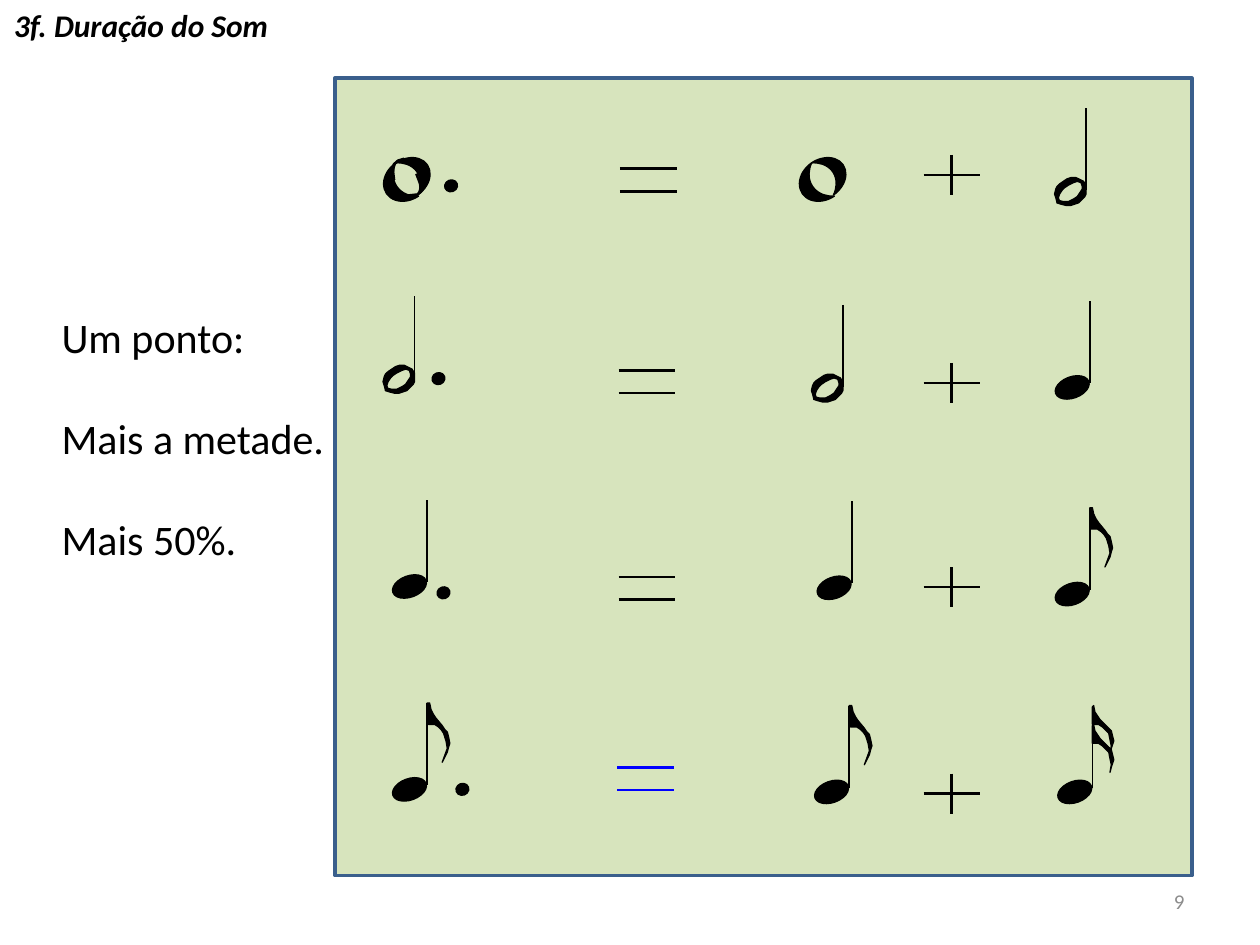
from lxml.etree import SubElement
from pptx import Presentation
from pptx.dml.color import RGBColor
from pptx.enum.shapes import MSO_CONNECTOR, MSO_SHAPE
from pptx.enum.text import MSO_ANCHOR, PP_ALIGN
from pptx.oxml.ns import qn
from pptx.util import Inches, Pt

COLORS = {"ink": "000000", "panel": "D7E4BD", "border": "3A5F8C",
          "accent": "0000FF", "number": "8C8C8C"}

EIGHTH_FLAG = [(0, 0), (2, 0), (3, 5), (5, 9), (7, 12), (12, 18), (14, 21),
               (16, 23), (17, 27), (18, 32), (17, 35), (16, 39), (14, 43),
               (12, 47), (16, 36), (15, 30), (13, 24), (11, 21), (9, 19),
               (6, 17), (2, 17), (1, 17)]
SIXTEENTH_FLAG = [(0, 1), (1, 0), (2, 5), (4, 8), (6, 11), (11, 16), (13, 18),
                  (15, 20), (16, 24), (17, 28), (16, 31), (15, 34), (14, 38),
                  (15, 32), (14, 27), (13, 22), (10, 19), (8, 17), (5, 15),
                  (1, 15), (0, 15)]
RING_TOP = [(-2, 58), (-4, 57), (-8, 55), (-12, 55), (-15, 56), (-18, 58),
            (-21, 60), (-23, 62), (-24, 64), (-25, 68), (-24, 71), (-23, 75),
            (-21, 74), (-22, 71), (-21, 68), (-19, 65), (-17, 63), (-14, 61),
            (-10, 59), (-7, 58), (-4, 59)]
RING_BOTTOM = [(-23, 75), (-20, 76), (-16, 77), (-12, 77), (-9, 76), (-6, 75),
               (-4, 73), (-1, 70), (0, 68), (0, 64), (0, 61), (-2, 58),
               (-4, 59), (-3, 62), (-3, 64), (-5, 67), (-7, 70), (-10, 72),
               (-14, 74), (-18, 74), (-22, 73)]
ARC_TOP = [(309, 140), (311, 135), (313, 131), (315, 129), (319, 128), (324, 129)]
ARC_BOTTOM = [(318, 152), (323, 154), (328, 156), (332, 155), (334, 149), (335, 141)]

deck = Presentation()
deck.slide_width, deck.slide_height = Inches(10), Inches(7.5)
page = deck.slides.add_slide(deck.slide_layouts[5])


def add_line(x1, y1, x2, y2, color="ink", width=1):
    line = page.shapes.add_connector(MSO_CONNECTOR.STRAIGHT, Inches(x1),
                                     Inches(y1), Inches(x2), Inches(y2))
    line.line.color.rgb = RGBColor.from_string(COLORS[color])
    line.line.width = Pt(width)
    SubElement(line._element.spPr, qn("a:effectLst"))


def paint(shape, width=0.75, fill="ink", line="ink", rotation=0):
    shape.shadow.inherit = False
    shape.rotation = rotation
    if fill:
        shape.fill.solid()
        shape.fill.fore_color.rgb = RGBColor.from_string(COLORS[fill])
    else:
        shape.fill.background()
    shape.line.color.rgb = RGBColor.from_string(COLORS[line])
    shape.line.width = Pt(width)


panel = page.shapes.add_shape(MSO_SHAPE.RECTANGLE, Inches(2.66), Inches(0.62),
                              Inches(6.8), Inches(6.33))
paint(panel, 2, "panel", "border")

outlines = []
filled_notes = [(3.11, 4.57, []), (6.48, 4.58, []), (8.37, 2.99, []),
                (3.11, 6.18, [(EIGHTH_FLAG, 0)]),
                (6.46, 6.2, [(EIGHTH_FLAG, 0)]),
                (8.37, 4.63, [(EIGHTH_FLAG, 0)]),
                (8.39, 6.2, [(SIXTEENTH_FLAG, 0), (SIXTEENTH_FLAG, 0.15)])]
for left, top, flags in filled_notes:
    head = page.shapes.add_shape(MSO_SHAPE.OVAL, Inches(left), Inches(top),
                                 Inches(0.28), Inches(0.17))
    paint(head, rotation=340)
    add_line(left + 0.28, top - 0.6, left + 0.28, top + 0.05)
    outlines += [(left + 0.28, top - 0.6 + drop, flag) for flag, drop in flags]

for stem, top in [(3.29, 2.35), (6.69, 2.42), (8.62, 0.86)]:
    add_line(stem, top, stem, top + 0.65)
    outlines += [(stem, top, RING_TOP), (stem, top, RING_BOTTOM)]

for left, top, points in outlines:
    corners = [(left * 100 + x, top * 100 + y) for x, y in points]
    builder = page.shapes.build_freeform(*corners[0], scale=Inches(0.01))
    builder.add_line_segments(corners[1:], close=True)
    paint(builder.convert_to_shape())

for left in (3.05, 6.35):
    for shift, top, height, flip in [(0, 1.32, 0.32, "0"), (0.16, 1.21, 0.31, "1")]:
        moon = page.shapes.add_shape(MSO_SHAPE.MOON, Inches(left + shift),
                                     Inches(top), Inches(0.2), Inches(height))
        paint(moon, rotation=325.8)
        moon._element.spPr.find(qn("a:xfrm")).set("flipH", flip)

for points in (ARC_TOP, ARC_BOTTOM):
    builder = page.shapes.build_freeform(*points[0], scale=Inches(0.01))
    builder.add_line_segments(points[1:], close=False)
    paint(builder.convert_to_shape(), 1.5, fill=None, rotation=331.8)

for left, top in [(3.53, 1.43), (3.43, 2.96), (3.47, 4.66), (3.62, 6.22)]:
    dot = page.shapes.add_shape(MSO_SHAPE.OVAL, Inches(left), Inches(top),
                                Inches(0.1), Inches(0.09))
    paint(dot, 1, rotation=340)

for left, equals, plus, color in [(4.92, 1.34, 1.39, "ink"), (4.91, 2.94, 3.04, "ink"),
                                  (4.91, 4.58, 4.66, "ink"), (4.9, 6.09, 6.3, "accent")]:
    for y in (equals, equals + 0.18):
        add_line(left, y, left + 0.45, y, color, 1.5)
    add_line(7.33, plus, 7.78, plus, width=1.5)
    add_line(7.55, plus - 0.16, 7.55, plus + 0.16, width=1.5)

title = page.shapes.title
title.left, title.top, title.width, title.height = (
    Inches(0), Inches(0), Inches(2.24), Inches(0.4))
rule = page.shapes.add_textbox(Inches(0.39), Inches(2.42), Inches(2.3), Inches(2.12))
number = page.shapes.add_textbox(Inches(7.17), Inches(6.95), Inches(2.33), Inches(0.4))

for box, lines, size, color, align, anchor, wrap in [
        (title, ["3f. Duração do Som"], 18, "ink", PP_ALIGN.CENTER, MSO_ANCHOR.TOP, False),
        (rule, ["Um ponto:", "Mais a metade.", "Mais 50%."], 24, "ink",
         PP_ALIGN.LEFT, MSO_ANCHOR.TOP, False),
        (number, ["9"], 12, "number", PP_ALIGN.RIGHT, MSO_ANCHOR.MIDDLE, True)]:
    frame = box.text_frame
    frame.word_wrap = wrap
    frame.vertical_anchor = anchor
    for index, text in enumerate(lines):
        para = frame.add_paragraph() if index else frame.paragraphs[0]
        para.alignment = align
        para.space_before = Pt(29 if index else 0)
        span = para.add_run()
        span.text = text
        span.font.name = "Calibri"
        span.font.size = Pt(size)
        span.font.bold = span.font.italic = box is title
        span.font.color.rgb = RGBColor.from_string(COLORS[color])

deck.save("out.pptx")
